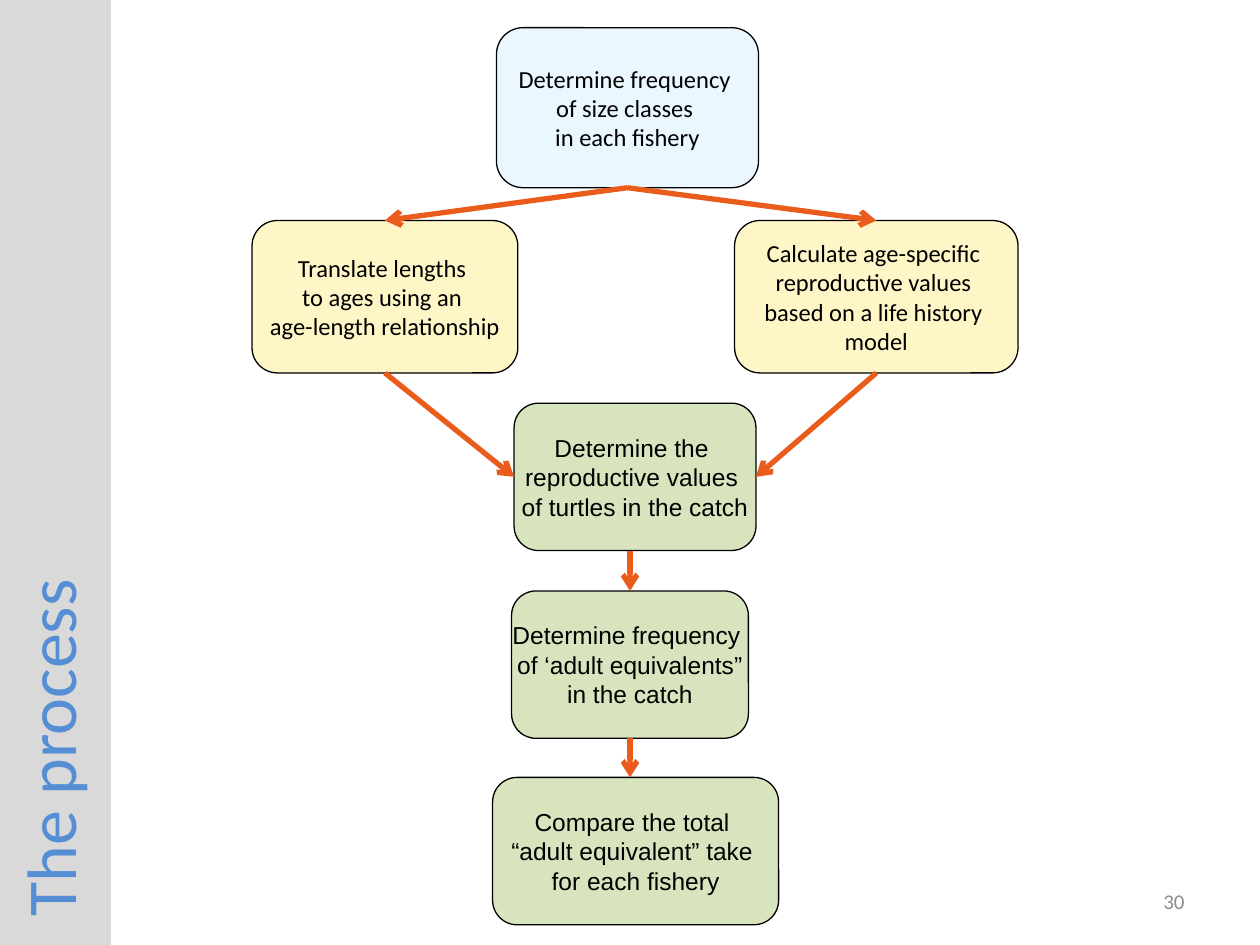
from typing import NamedTuple

import pptx
import pptx.dml.color
import pptx.enum.shapes
import pptx.enum.text
import pptx.oxml
import pptx.oxml.ns
import pptx.util

Inches = pptx.util.Inches
Pt = pptx.util.Pt
RGBColor = pptx.dml.color.RGBColor
MSO_SHAPE = pptx.enum.shapes.MSO_SHAPE
PP_ALIGN = pptx.enum.text.PP_ALIGN
MSO_ANCHOR = pptx.enum.text.MSO_ANCHOR

BLACK = RGBColor(0x00, 0x00, 0x00)
PALE_BLUE = RGBColor(0xEB, 0xF7, 0xFF)
PALE_YELLOW = RGBColor(0xFE, 0xF6, 0xC6)
PALE_GREEN = RGBColor(0xD7, 0xE4, 0xBD)
ORANGE = RGBColor(0xEA, 0x5C, 0x1C)
SIDEBAR_GRAY = RGBColor(0xD9, 0xD9, 0xD9)
TITLE_BLUE = RGBColor(0x55, 0x8E, 0xD5)
NUMBER_GRAY = RGBColor(0x8C, 0x8C, 0x8C)


class Step(NamedTuple):
    left: float
    top: float
    width: float
    height: float
    fill: RGBColor
    font: str
    lines: tuple[str, ...]


class Arrow(NamedTuple):
    start: tuple[float, float]
    end: tuple[float, float]


FREQUENCY = Step(3.94, 0.22, 2.08, 1.27, PALE_BLUE, "Calibri",
                 ("Determine frequency ", "of size classes ", "in each fishery"))
AGES = Step(2, 1.75, 2.11, 1.21, PALE_YELLOW, "Calibri",
            ("Translate lengths ", "to ages using an ", "age-length relationship"))
LIFE_HISTORY = Step(5.83, 1.75, 2.25, 1.21, PALE_YELLOW, "Calibri",
                    ("Calculate age-specific ", "reproductive values ",
                     "based on a life history ", "model"))
CATCH_VALUES = Step(4.08, 3.2, 1.92, 1.17, PALE_GREEN, "Arial",
                    ("Determine the ", "reproductive values ", "of turtles in the catch"))
EQUIVALENTS = Step(4.06, 4.69, 1.88, 1.17, PALE_GREEN, "Arial",
                   ("Determine frequency ", "of ‘adult equivalents”", "in the catch"))
COMPARISON = Step(3.91, 6.17, 2.27, 1.17, PALE_GREEN, "Arial",
                  ("Compare the total ", "“adult equivalent” take ", "for each fishery"))
STEPS = (FREQUENCY, AGES, LIFE_HISTORY, CATCH_VALUES, EQUIVALENTS, COMPARISON)
CENTER_X = 5


def top_of(step: Step) -> tuple[float, float]:
    return step.left + step.width / 2, step.top


def bottom_of(step: Step) -> tuple[float, float]:
    return step.left + step.width / 2, step.top + step.height


def straight_down(upper: Step, lower: Step) -> Arrow:
    return Arrow((CENTER_X, upper.top + upper.height), (CENTER_X, lower.top))


CATCH_MIDDLE = CATCH_VALUES.top + CATCH_VALUES.height / 2
ARROWS = (
    Arrow(bottom_of(FREQUENCY), top_of(AGES)),
    Arrow(bottom_of(FREQUENCY), top_of(LIFE_HISTORY)),
    Arrow(bottom_of(AGES), (CATCH_VALUES.left, CATCH_MIDDLE)),
    Arrow(bottom_of(LIFE_HISTORY), (CATCH_VALUES.left + CATCH_VALUES.width, CATCH_MIDDLE)),
    straight_down(CATCH_VALUES, EQUIVALENTS),
    straight_down(EQUIVALENTS, COMPARISON),
)


def style_paragraph(paragraph, font: str, size: float, color: RGBColor, align) -> None:
    paragraph.alignment = align
    paragraph.font.name = font
    paragraph.font.size = Pt(size)
    paragraph.font.color.rgb = color


def draw_step(slide, step: Step) -> None:
    box = slide.shapes.add_shape(
        MSO_SHAPE.FLOWCHART_ALTERNATE_PROCESS,
        Inches(step.left), Inches(step.top), Inches(step.width), Inches(step.height))
    box.shadow.inherit = False
    box.fill.solid()
    box.fill.fore_color.rgb = step.fill
    box.line.color.rgb = BLACK
    box.line.width = Pt(0.75)
    frame = box.text_frame
    frame.word_wrap = False
    frame.vertical_anchor = MSO_ANCHOR.MIDDLE
    frame.text = "\n".join(step.lines)
    for paragraph in frame.paragraphs:
        style_paragraph(paragraph, step.font, 14, BLACK, PP_ALIGN.CENTER)


def draw_arrow(slide, arrow: Arrow) -> None:
    connector = slide.shapes.add_connector(
        pptx.enum.shapes.MSO_CONNECTOR.STRAIGHT,
        *(Inches(value) for value in arrow.start + arrow.end))
    connector.line.color.rgb = ORANGE
    connector.line.width = Pt(3)
    namespace = pptx.oxml.ns.nsdecls("a")
    connector.line._get_or_add_ln().append(
        pptx.oxml.parse_xml(f'<a:tailEnd {namespace} type="arrow"/>'))
    connector._element.spPr.append(pptx.oxml.parse_xml(f"<a:effectLst {namespace}/>"))


def draw_sidebar(slide) -> None:
    sidebar = slide.shapes.add_shape(
        MSO_SHAPE.RECTANGLE, Inches(0), Inches(0), Inches(0.88), Inches(7.5))
    sidebar.shadow.inherit = False
    sidebar.fill.solid()
    sidebar.fill.fore_color.rgb = SIDEBAR_GRAY
    sidebar.line.fill.background()
    frame = sidebar.text_frame
    frame.word_wrap = True
    frame.vertical_anchor = MSO_ANCHOR.TOP
    frame._txBody.bodyPr.set("vert", "vert270")
    frame.text = " The process"
    style_paragraph(frame.paragraphs[0], "Calibri", 40, TITLE_BLUE, PP_ALIGN.LEFT)


def draw_page_number(slide) -> None:
    number = slide.shapes.add_textbox(Inches(7.17), Inches(6.95), Inches(2.33), Inches(0.4))
    frame = number.text_frame
    frame.word_wrap = True
    frame.vertical_anchor = MSO_ANCHOR.MIDDLE
    frame.text = "30"
    style_paragraph(frame.paragraphs[0], "Calibri", 12, NUMBER_GRAY, PP_ALIGN.RIGHT)


def main() -> None:
    presentation = pptx.Presentation()
    presentation.slide_width = Inches(10)
    presentation.slide_height = Inches(7.5)
    slide = presentation.slides.add_slide(presentation.slide_layouts[6])
    for step in STEPS:
        draw_step(slide, step)
    for arrow in ARROWS:
        draw_arrow(slide, arrow)
    draw_sidebar(slide)
    draw_page_number(slide)
    presentation.save("out.pptx")


if __name__ == "__main__":
    main()
